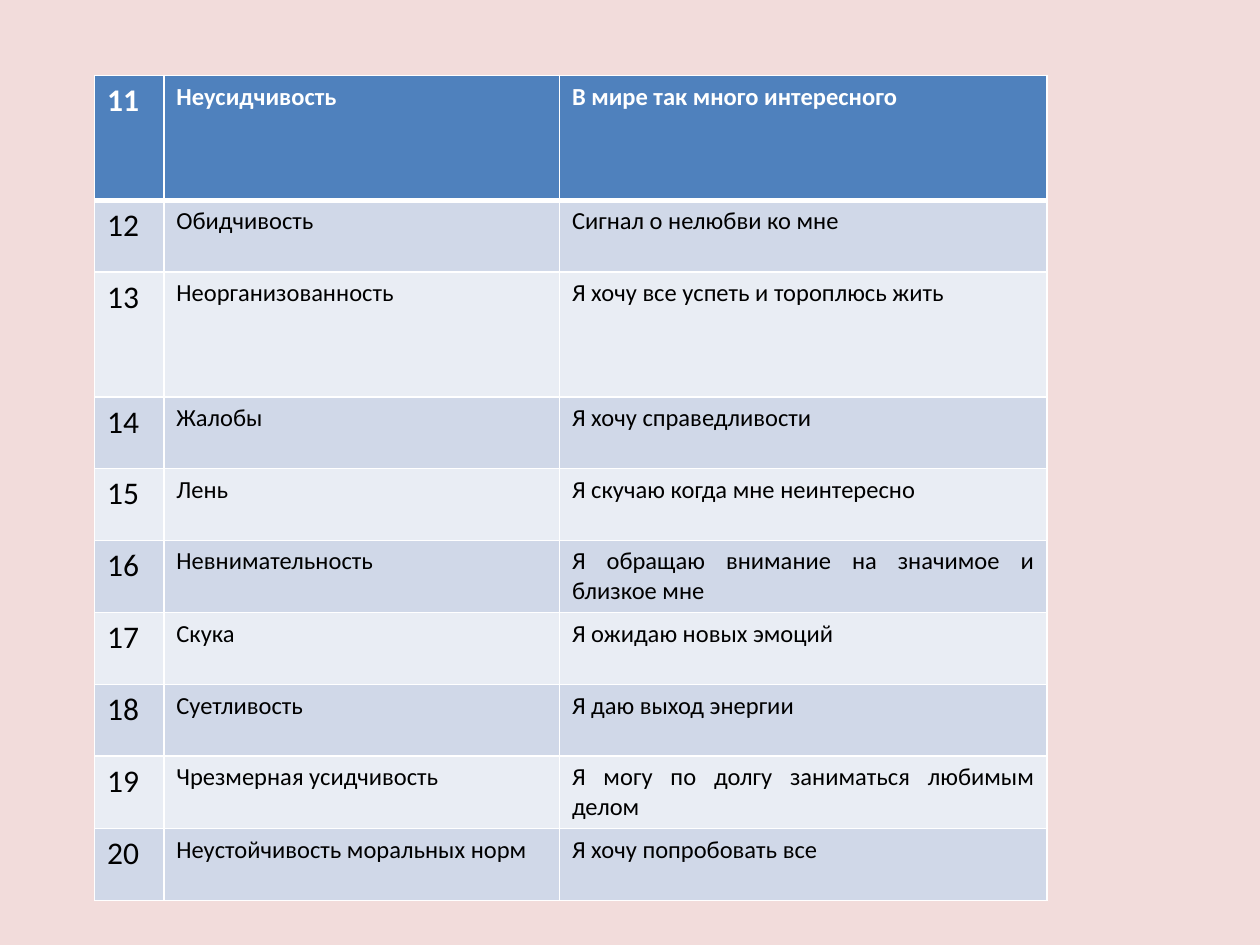
"""Builds a slide with a table that reads children's faults as needs."""
from lxml.etree import SubElement
from pptx import Presentation
from pptx.dml.color import RGBColor
from pptx.enum.text import PP_ALIGN
from pptx.oxml.ns import qn
from pptx.util import Inches, Pt


def paint(fill, colour):
    fill.solid()
    fill.fore_color.rgb = RGBColor.from_string(colour)


def add_border(cell, side, points):
    line = SubElement(cell._tc.get_or_add_tcPr(), qn(f"a:ln{side}"), w=str(Pt(points)))
    solid = SubElement(line, qn("a:solidFill"))
    SubElement(solid, qn("a:srgbClr"), val="FFFFFF")


FIRST_NUMBER = 11
TRAITS = [
    ("Неусидчивость", "В мире так много интересного"),
    ("Обидчивость", "Сигнал о нелюбви ко мне"),
    ("Неорганизованность", "Я хочу все успеть и тороплюсь жить"),
    ("Жалобы", "Я хочу справедливости"),
    ("Лень", "Я скучаю когда мне неинтересно"),
    ("Невнимательность", "Я обращаю внимание на значимое и близкое мне"),
    ("Скука", "Я ожидаю новых эмоций"),
    ("Суетливость", "Я даю выход энергии"),
    ("Чрезмерная усидчивость", "Я могу по долгу заниматься любимым делом"),
    ("Неустойчивость моральных норм", "Я хочу попробовать все"),
]
COLUMN_PERCENTS = [5.5, 31.4, 38.7]
ROW_PERCENT, TALL_ROW_PERCENT = 7.6, 13.2
TALL_ROWS = (0, 2)
HEADER = {"fill": "4F81BD", "text": "FFFFFF", "bold": True}
BANDS = [
    {"fill": "E9EDF4", "text": "000000", "bold": False},
    {"fill": "D0D8E8", "text": "000000", "bold": False},
]

deck = Presentation()
deck.slide_width, deck.slide_height = Inches(10), Inches(7.5)
across, down = deck.slide_width / 100, deck.slide_height / 100
slide = deck.slides.add_slide(deck.slide_layouts[6])
paint(slide.background.fill, "F2DCDB")

widths = [int(percent * across) for percent in COLUMN_PERCENTS]
heights = [
    int((TALL_ROW_PERCENT if row in TALL_ROWS else ROW_PERCENT) * down)
    for row in range(len(TRAITS))
]
traits = slide.shapes.add_table(
    len(heights), len(widths), int(7.5 * across), int(8 * down), sum(widths), sum(heights)
).table
for column, width in zip(traits.columns, widths):
    column.width = width

for row, (trait, meaning) in enumerate(TRAITS):
    traits.rows[row].height = heights[row]
    look = BANDS[row % 2] if row else HEADER
    borders = {"L": 1, "R": 1, "T": 3 if row == 1 else 1, "B": 1 if row else 3}
    for column, words in enumerate((str(FIRST_NUMBER + row), trait, meaning)):
        cell = traits.cell(row, column)
        for side, points in borders.items():
            add_border(cell, side, points)
        paint(cell.fill, look["fill"])
        paragraph = cell.text_frame.paragraphs[0]
        paragraph.alignment = PP_ALIGN.JUSTIFY if column else PP_ALIGN.LEFT
        run = paragraph.add_run()
        run.text = words
        letters = {"name": "Calibri", "size": Pt(14 if column else 18), "bold": look["bold"]}
        for attribute, value in letters.items():
            setattr(run.font, attribute, value)
        paint(run.font.fill, look["text"])

deck.save("out.pptx")
